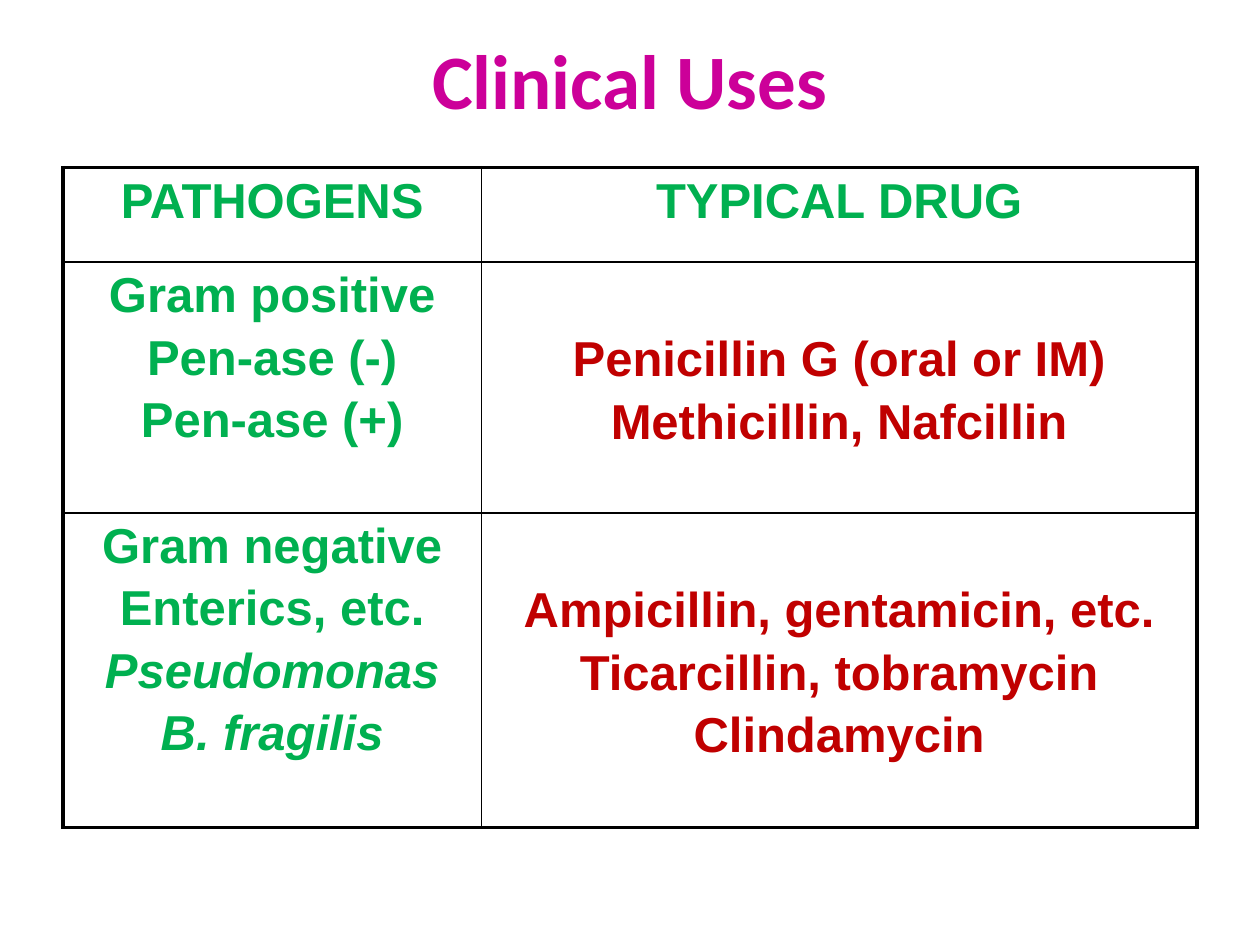
from lxml.etree import SubElement
from pptx import Presentation
from pptx.dml.color import RGBColor
from pptx.enum.text import MSO_ANCHOR, PP_ALIGN
from pptx.oxml.ns import qn
from pptx.util import Inches, Pt

COLORS = {"title": "CC0099", "pathogen": "00B050", "drug": "C00000", "border": "000000"}
COLUMN_WIDTHS = [3.32, 5.68]
ROW_HEIGHTS = [0.75, 1.99, 2.5]
CELL_MARGIN = 0.05
LINE_PITCH = 0.51
ITALIC_NAMES = {"Pseudomonas", "B. fragilis"}
ROWS = [
    (["PATHOGENS"], ["TYPICAL DRUG"]),
    (
        ["Gram positive", "Pen-ase (-)", "Pen-ase (+)"],
        ["Penicillin G (oral or IM)", "Methicillin, Nafcillin"],
    ),
    (
        ["Gram negative", "Enterics, etc.", "Pseudomonas", "B. fragilis"],
        ["Ampicillin, gentamicin, etc.", "Ticarcillin, tobramycin", "Clindamycin"],
    ),
]


def style_paragraph(para, text, font_name, size, color):
    para.text = text
    para.alignment = PP_ALIGN.CENTER
    para.font.name = font_name
    para.font.size = Pt(size)
    para.font.bold = True
    para.font.color.rgb = RGBColor.from_string(COLORS[color])


def add_title(page, text):
    box = page.shapes.add_textbox(Inches(0.75), Inches(0), Inches(8.5), Inches(1.25))
    frame = box.text_frame
    frame.word_wrap = True
    frame.vertical_anchor = MSO_ANCHOR.MIDDLE
    style_paragraph(frame.paragraphs[0], text, "Calibri", 44, "title")


def set_borders(cell, widths):
    properties = cell._tc.get_or_add_tcPr()
    for index, (side, width) in enumerate(widths.items()):
        line = SubElement(properties, qn(f"a:ln{side}"), w=str(Pt(width)))
        fill = SubElement(line, qn("a:solidFill"))
        SubElement(fill, qn("a:srgbClr"), val=COLORS["border"])
        properties.insert(index, line)


def fill_cell(cell, lines, color):
    cell.fill.background()
    frame = cell.text_frame
    for index, text in enumerate(lines):
        para = frame.add_paragraph() if index else frame.paragraphs[0]
        style_paragraph(para, text, "Arial", 28, color)
        para.font.italic = text in ITALIC_NAMES
        para.space_before = Pt(4.5 if index else 0)


def add_drug_table(page):
    last_row, last_column = len(ROWS) - 1, len(COLUMN_WIDTHS) - 1
    table = page.shapes.add_table(
        len(ROWS), len(COLUMN_WIDTHS), Inches(0.5), Inches(1.33),
        Inches(sum(COLUMN_WIDTHS)), Inches(sum(ROW_HEIGHTS)),
    ).table
    table.first_row = False
    table.horz_banding = False
    for column, width in zip(table.columns, COLUMN_WIDTHS):
        column.width = Inches(width)
    for row, height in zip(table.rows, ROW_HEIGHTS):
        row.height = Inches(height)
    for row_index, row in enumerate(ROWS):
        for column_index, lines in enumerate(row):
            cell = table.cell(row_index, column_index)
            is_drug = row_index > 0 and column_index > 0
            fill_cell(cell, lines, "drug" if is_drug else "pathogen")
            cell.margin_top = Inches(CELL_MARGIN + (LINE_PITCH if is_drug else 0))
            outer_sides = {
                "L": column_index == 0,
                "R": column_index == last_column,
                "T": row_index == 0,
                "B": row_index == last_row,
            }
            set_borders(cell, {side: 2.25 if outer else 1 for side, outer in outer_sides.items()})


def main():
    deck = Presentation()
    deck.slide_width, deck.slide_height = Inches(10), Inches(7.5)
    page = deck.slides.add_slide(deck.slide_layouts[6])
    add_title(page, "Clinical Uses")
    add_drug_table(page)
    deck.save("out.pptx")


if __name__ == "__main__":
    main()
